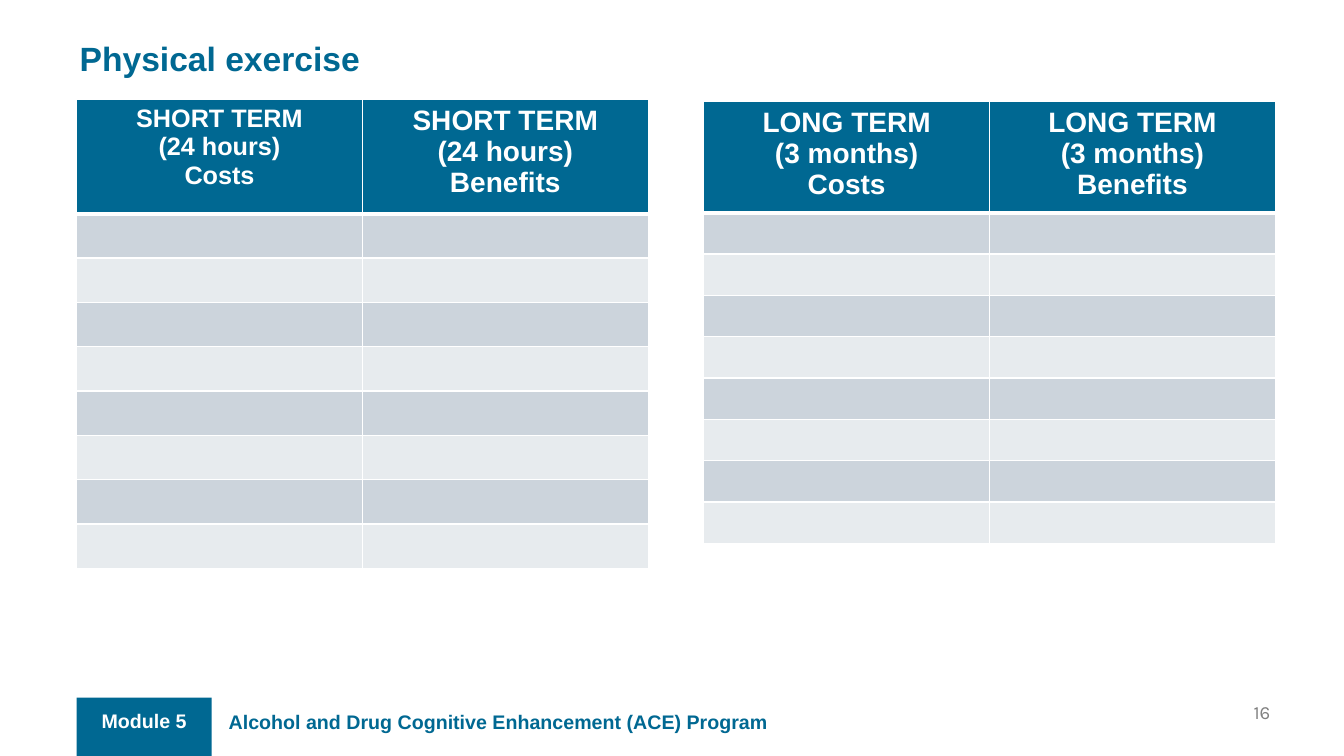
"""Build the physical exercise slide with its cost and benefit tables."""
from lxml.etree import SubElement
from pptx import Presentation
from pptx.dml.color import RGBColor
from pptx.enum.shapes import MSO_SHAPE
from pptx.enum.text import MSO_ANCHOR, PP_ALIGN
from pptx.oxml.ns import qn
from pptx.util import Inches, Pt

BLUE = RGBColor(0x00, 0x68, 0x92)
WHITE = RGBColor(0xFF, 0xFF, 0xFF)
GREY = RGBColor(0x80, 0x80, 0x80)
DARK = RGBColor(0xCC, 0xD4, 0xDC)
LIGHT = RGBColor(0xE7, 0xEB, 0xEE)


def write(frame, lines, size, color, align=PP_ALIGN.LEFT, gap=0, name="Arial", bold=True):
    frame.text = "\n".join(lines)
    form = {"size": Pt(size), "name": name, "bold": bold}
    for para in frame.paragraphs:
        para.alignment = align
        para.space_before = Pt(gap)
        for run in para.runs:
            for key, value in form.items():
                setattr(run.font, key, value)
            run.font.color.rgb = color


def paint(cell, color, base):
    props = cell._tc.get_or_add_tcPr()
    for side, width in {"lnL": 1, "lnR": 1, "lnT": 1, "lnB": base}.items():
        line = SubElement(props, qn("a:" + side), w=str(Pt(width)))
        fill = SubElement(line, qn("a:solidFill"))
        SubElement(fill, qn("a:srgbClr"), val=str(WHITE))
    cell.fill.solid()
    cell.fill.fore_color.rgb = color


deck = Presentation()
deck.slide_width, deck.slide_height = Inches(13.33), Inches(7.5)
slide = deck.slides.add_slide(deck.slide_layouts[5])
shapes = slide.shapes

block = shapes.add_shape(
    MSO_SHAPE.RECTANGLE, Inches(0.76), Inches(6.92), Inches(1.34), Inches(0.58))
block.shadow.inherit = False
block.fill.solid()
block.fill.fore_color.rgb = BLUE
block.line.fill.background()

labels = [
    ("Alcohol and Drug Cognitive Enhancement (ACE) Program",
     (2.17, 6.99, 11.14, 0.47), 0.1, {"size": 14, "color": BLUE, "gap": 8}),
    ("Module 5", (0.76, 6.98, 1.34, 0.34), 0.1,
     {"size": 14, "color": WHITE, "gap": 8, "align": PP_ALIGN.CENTER}),
    ("16", (10.6, 6.95, 2, 0.2), 0,
     {"size": 13.3, "color": GREY, "align": PP_ALIGN.RIGHT, "name": "Karla", "bold": False}),
]
for words, place, inset, look in labels:
    frame = shapes.add_textbox(*map(Inches, place)).text_frame
    margins = {"margin_left": inset, "margin_right": inset,
               "margin_top": inset / 2, "margin_bottom": inset / 2}
    for key, value in margins.items():
        setattr(frame, key, Inches(value))
    frame.word_wrap = True
    write(frame, [words], **look)

grids = [
    ("SHORT TERM", "(24 hours)", 0.76, 0.99, 1.13, 0.44, (18, 20)),
    ("LONG TERM", "(3 months)", 6.98, 1.01, 1.09, 0.41, (20, 20)),
]
for term, span, left, top, head, step, sizes in grids:
    table = shapes.add_table(
        9, 2, Inches(left), Inches(top), Inches(5.67), Inches(head + 8 * step)).table
    for index, row in enumerate(table.rows):
        row.height = Inches(step if index else head)
        tint = (DARK if index % 2 else LIGHT) if index else BLUE
        for cell in row.cells:
            paint(cell, tint, 1 if index else 3)
    for cell, kind, size in zip(table.rows[0].cells, ("Costs", "Benefits"), sizes):
        cell.margin_left = cell.margin_right = Inches(0.13)
        write(cell.text_frame, [term, span, kind], size, WHITE, PP_ALIGN.CENTER)

title = shapes.title
place = {"left": 0.79, "top": 0.34, "width": 8.92, "height": 0.47}
for key, value in place.items():
    setattr(title, key, Inches(value))
frame = title.text_frame
for side in ("left", "right", "top", "bottom"):
    setattr(frame, "margin_" + side, 0)
frame.vertical_anchor = MSO_ANCHOR.MIDDLE
write(frame, ["Physical exercise"], 24, BLUE, gap=8)

deck.save("out.pptx")
